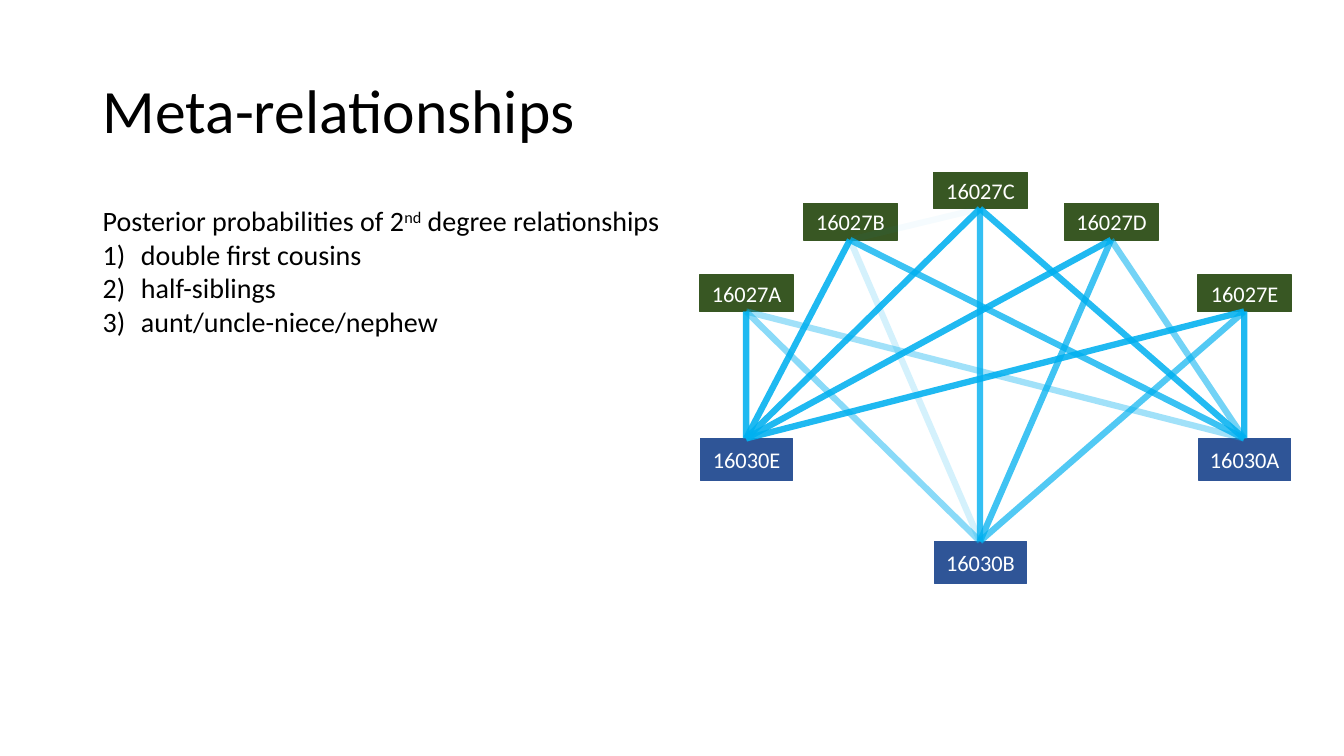
import pptx
import pptx.dml.color
import pptx.enum.shapes
import pptx.enum.text
import pptx.oxml.ns
import pptx.util
from lxml import etree

PX = 9144  # EMU per px, 100 px to the inch
COLORS = {"text": "000000", "label": "FFFFFF", "green": "385723",
          "blue": "2F5597", "link": "00B0F0"}


def rgb(name):
    return pptx.dml.color.RGBColor.from_string(COLORS[name])


def add_xml(parent, tag, **attributes):
    return etree.SubElement(parent, pptx.oxml.ns.qn(tag), attributes)


class Painter:
    font_name = "Calibri"

    def __init__(self, slide):
        self.slide = slide
        self.network = slide.shapes.add_group_shape().shapes

    def style(self, paragraph, size, color):
        paragraph.font.name = self.font_name
        paragraph.font.size = pptx.util.Pt(size)
        paragraph.font.color.rgb = rgb(color)

    def text(self, left, top, width, height, paragraphs, size, wrap=True):
        """Add a text box; each paragraph is a list of (text, baseline percent)."""
        box = self.slide.shapes.add_textbox(*(n * PX for n in (left, top, width, height)))
        frame = box.text_frame
        frame.word_wrap = wrap
        for i, parts in enumerate(paragraphs):
            paragraph = frame.add_paragraph() if i else frame.paragraphs[0]
            self.style(paragraph, size, "text")
            for words, baseline in parts:
                run = paragraph.add_run()
                run.text = words
                if baseline:
                    run._r.get_or_add_rPr().set("baseline", str(baseline * 1000))
        return frame

    def number(self, paragraphs, indent):
        for paragraph in paragraphs:
            props = paragraph._p.get_or_add_pPr()
            props.set("marL", str(indent * PX))
            props.set("indent", str(-indent * PX))
            bullet = pptx.oxml.ns.qn("a:buAutoNum")
            props.insert(0, etree.Element(bullet, type="arabicParenR"))

    def person(self, name, center, top, width, height, color):
        box = self.network.add_shape(
            pptx.enum.shapes.MSO_SHAPE.RECTANGLE,
            (center - width // 2) * PX, top * PX, width * PX, height * PX)
        box.shadow.inherit = False
        box.fill.solid()
        box.fill.fore_color.rgb = rgb(color)
        box.line.color.rgb = rgb(color)
        box.line.width = pptx.util.Pt(1)
        frame = box.text_frame
        frame.word_wrap = False
        frame.vertical_anchor = pptx.enum.text.MSO_ANCHOR.MIDDLE
        label = frame.paragraphs[0]
        label.text = name
        label.alignment = pptx.enum.text.PP_ALIGN.CENTER
        self.style(label, 16, "label")

    def link(self, start, end, probability):
        """Join two points; the opacity in percent shows the probability."""
        line = self.network.add_connector(
            pptx.enum.shapes.MSO_CONNECTOR.STRAIGHT, *(n * PX for n in start + end))
        line.line.width = pptx.util.Pt(4.5)
        line.line.color.rgb = rgb("link")
        props = line._element.spPr
        color = next(props.iter(pptx.oxml.ns.qn("a:srgbClr")))
        add_xml(color, "a:alpha", val=str(probability * 1000))
        add_xml(props, "a:effectLst")


# name: (center, top)
GREEN = {"16027A": (740, 273), "16027B": (843, 202), "16027C": (972, 171),
         "16027D": (1102, 202), "16027E": (1234, 273)}
BLUE = {"16030E": (740, 435), "16030B": (972, 537), "16030A": (1234, 435)}
GREEN_SIZE = (93, 36)
BLUE_SIZE = (91, 42)

# probabilities in percent towards 16030A, 16030B and 16030E
RELATED = {"16027A": (36, 45, 88), "16027B": (76, 16, 88), "16027C": (86, 80, 88),
           "16027D": (55, 74, 87), "16027E": (87, 67, 88)}


def main():
    deck = pptx.Presentation()
    deck.slide_width, deck.slide_height = 1333 * PX, 750 * PX
    painter = Painter(deck.slides.add_slide(deck.slide_layouts[6]))

    relationships = ["double first cousins", "half-siblings", "aunt/uncle-niece/nephew"]
    heading = [("Posterior probabilities of 2", 0), ("nd", 30),
               (" degree relationships", 0)]
    legend = painter.text(92, 197, 581, 145,
                          [heading] + [[(words, 0)] for words in relationships],
                          20, wrap=False)
    painter.number(legend.paragraphs[1:], 38)

    for name, spot in GREEN.items():
        painter.person(name, *spot, *GREEN_SIZE, "green")
    for name, spot in BLUE.items():
        painter.person(name, *spot, *BLUE_SIZE, "blue")

    bottoms = {name: (x, top + GREEN_SIZE[1]) for name, (x, top) in GREEN.items()}
    painter.link(bottoms["16027B"], bottoms["16027C"], 3)
    for name, probabilities in RELATED.items():
        for relative, probability in zip(reversed(BLUE), probabilities):
            painter.link(bottoms[name], BLUE[relative], probability)

    title = painter.text(92, 40, 1242, 145, [[("Meta-relationships", 0)]], 44)
    title.vertical_anchor = pptx.enum.text.MSO_ANCHOR.MIDDLE
    title.paragraphs[0].line_spacing = 0.9

    deck.save("out.pptx")


if __name__ == "__main__":
    main()
